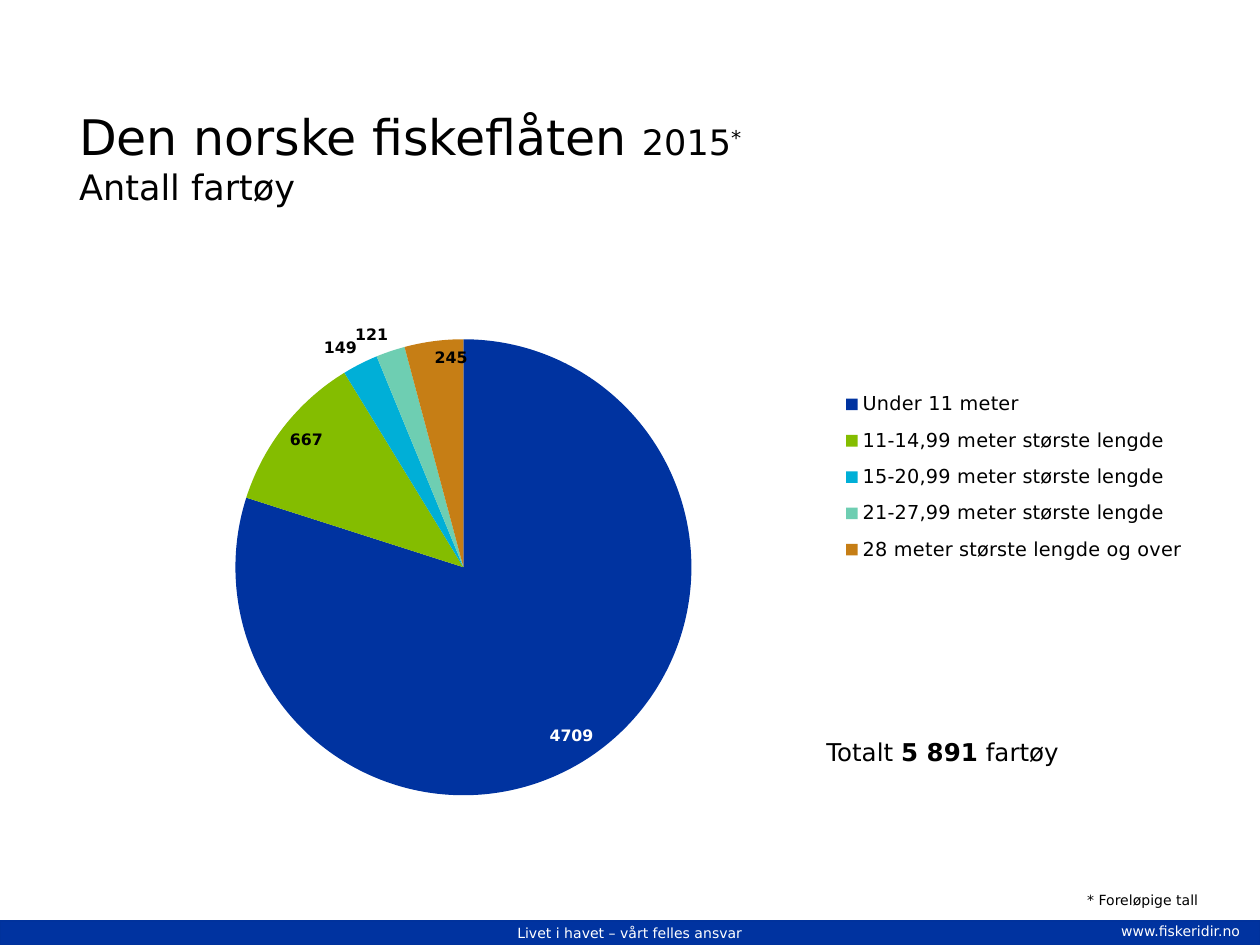
from dataclasses import dataclass

from lxml import etree
from pptx import Presentation
from pptx.chart.data import CategoryChartData
from pptx.dml.color import RGBColor
from pptx.enum import chart as ch, shapes, text
from pptx.oxml import ns
from pptx.util import Inches, Pt


@dataclass(frozen=True)
class Theme:
    font: str = "DejaVu Sans"
    black: str = "000000"
    white: str = "FFFFFF"
    blue: str = "0033A0"
    border: str = "00329C"
    slices: tuple = ("0033A0", "84BD00", "00AFD7", "6ECEB2", "C67E15")
    title: int = 28
    subtitle: int = 20
    total: int = 14
    legend: int = 11
    label: int = 9
    small: int = 8


T = Theme()


def style(font, size, color=T.black, bold=False):
    for name, value in {"name": T.font, "size": Pt(size), "bold": bold}.items():
        setattr(font, name, value)
    font.color.rgb = RGBColor.from_string(color)


def add_text(box, lines, **fmt):
    """Write lines of (text, size, bold) runs into a text box."""
    tf = box.text_frame
    tf.word_wrap = True
    for i, line in enumerate(lines):
        p = tf.add_paragraph() if i else tf.paragraphs[0]
        for content, size, bold in line:
            r = p.add_run()
            r.text = content
            style(r.font, size, bold=bold, **fmt)
    return tf


prs = Presentation()
prs.slide_width, prs.slide_height = Inches(10), Inches(7.5)
s = prs.slides.add_slide(prs.slide_layouts[6])

# Footer band
band = s.shapes.add_shape(shapes.MSO_SHAPE.RECTANGLE, Inches(0), Inches(7.31), Inches(10), Inches(0.19))
band.shadow.inherit = False
band.fill.solid()
band.fill.fore_color.rgb = RGBColor.from_string(T.blue)
band.line.color.rgb = RGBColor.from_string(T.border)
band.line.width = Pt(0.75)
tf = add_text(band, [[("Livet i havet – vårt felles ansvar", T.small, False)]], color=T.white)
tf.vertical_anchor = text.MSO_ANCHOR.MIDDLE
tf.paragraphs[0].alignment = text.PP_ALIGN.CENTER

# Text boxes: position, colour, lines of runs
boxes = [
    ((8.8, 7.27, 1.2, 0.24), T.white, [[("www.fiskeridir.no", T.small, False)]]),
    ((0.53, 0.8, 5.97, 1.06), T.black, [
        [("Den norske fiskeflåten ", T.title, False), ("2015", T.subtitle, False), ("*", T.subtitle, False)],
        [("Antall fartøy", T.subtitle, False)]]),
    ((6.46, 5.8, 2.33, 0.38), T.black, [
        [("Totalt ", T.total, False), ("5 891", T.total, True), (" fartøy", T.total, False)]]),
    ((8.53, 7.03, 1.37, 0.24), T.black, [[("* Foreløpige tall", T.small, False)]]),
]
for at, color, lines in boxes:
    box = s.shapes.add_textbox(*map(Inches, at))
    tf = add_text(box, lines, color=color)
    for r in tf.paragraphs[0].runs:
        if r.text == "*":
            r.font._element.set("baseline", "30000")

# Pie of vessels by length
fleet = {
    "Under 11 meter": 4709,
    "11-14,99 meter største lengde": 667,
    "15-20,99 meter største lengde": 149,
    "21-27,99 meter største lengde": 121,
    "28 meter største lengde og over": 245,
}
data = CategoryChartData()
data.categories = list(fleet)
data.add_series("Antall fartøy", list(fleet.values()))
chart = s.shapes.add_chart(ch.XL_CHART_TYPE.PIE, Inches(0.3), Inches(2.1), Inches(9.45), Inches(4.82), data).chart
style(chart.font, 10)
chart.has_title = False
chart.has_legend = True
chart.legend.position = ch.XL_LEGEND_POSITION.RIGHT
chart.legend.include_in_layout = False
style(chart.legend.font, T.legend)

plot = chart.plots[0]
plot.vary_by_categories = True
plot.has_data_labels = True
labels = plot.data_labels
labels.show_value = True
labels.show_percentage = False
labels.position = ch.XL_LABEL_POSITION.INSIDE_END
style(labels.font, T.label, bold=True)

for i, (color, vessels) in enumerate(zip(T.slices, fleet.values())):
    point = plot.series[0].points[i]
    point.format.fill.solid()
    point.format.fill.fore_color.rgb = RGBColor.from_string(color)
    point.format.line.fill.background()
    label = point.data_label
    style(label.font, T.label, T.white if color == T.blue else T.black, bold=True)
    narrow = vessels < 200
    label.position = ch.XL_LABEL_POSITION.OUTSIDE_END if narrow else ch.XL_LABEL_POSITION.INSIDE_END

# Manual layout of pie and legend, as fractions of the chart
plot_area = chart._chartSpace.chart.plotArea
legend = chart.legend._element
for parent, target, frame in [
    (plot_area, "inner", (0.166, 0.123, 0.383, 0.751)),
    (legend, None, (0.65, 0.19, 0.34, 0.32)),
]:
    for old in parent.findall(ns.qn("c:layout")):
        parent.remove(old)
    layout = etree.Element(ns.qn("c:layout"))
    manual = etree.SubElement(layout, ns.qn("c:manualLayout"))
    settings = [("layoutTarget", target)] if target else []
    settings += [("xMode", "edge"), ("yMode", "edge"), *zip("xywh", frame)]
    for tag, value in settings:
        etree.SubElement(manual, ns.qn(f"c:{tag}")).set("val", str(value))
    parent.insert(0 if target else 1, layout)

prs.save("out.pptx")
